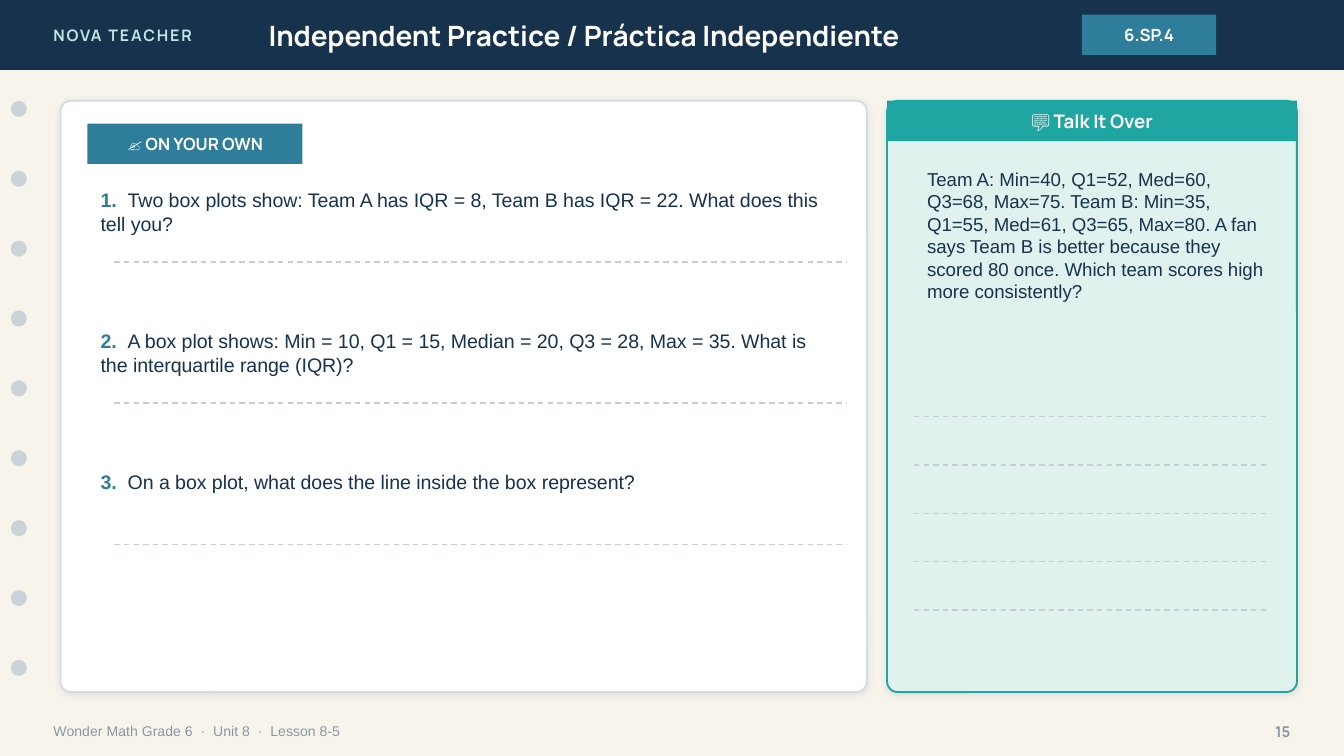
from lxml import etree
from pptx import Presentation
from pptx.dml.color import RGBColor
from pptx.enum.dml import MSO_LINE_DASH_STYLE as DASH
from pptx.enum.shapes import MSO_CONNECTOR, MSO_SHAPE as SHAPE
from pptx.enum.text import MSO_ANCHOR as ANCHOR, PP_ALIGN as ALIGN
from pptx.oxml import parse_xml
from pptx.oxml.ns import nsdecls, qn
from pptx.util import Pt

NAVY = RGBColor(0x17, 0x32, 0x4D)
BLUE = RGBColor(0x2E, 0x7D, 0x9A)
TEAL = RGBColor(0x1F, 0xA6, 0xA2)
MINT = RGBColor(0xDF, 0xF2, 0xEE)
PALE_TEAL = RGBColor(0xBF, 0xE6, 0xE2)
CREAM = RGBColor(0xF7, 0xF4, 0xEC)
WHITE = RGBColor(0xFF, 0xFF, 0xFF)
DOT_GREY = RGBColor(0xCB, 0xD3, 0xD9)
BORDER_GREY = RGBColor(0xD6, 0xDB, 0xDF)
RULE_GREY = RGBColor(0xC7, 0xCD, 0xD2)
FOOTER_GREY = RGBColor(0x8A, 0x96, 0xA3)

HEADING, BODY = "Manrope", "Arial"
HEADER_H = 37.44
CARD_TOP, CARD_H = 54, 316.8

QUESTIONS = [
    "Two box plots show: Team A has IQR = 8, Team B has IQR = 22. "
    "What does this tell you?",
    "A box plot shows: Min = 10, Q1 = 15, Median = 20, Q3 = 28, Max = 35. "
    "What is the interquartile range (IQR)?",
    "On a box plot, what does the line inside the box represent?",
]
DISCUSSION = (
    "Team A: Min=40, Q1=52, Med=60, Q3=68, Max=75. "
    "Team B: Min=35, Q1=55, Med=61, Q3=65, Max=80. "
    "A fan says Team B is better because they scored 80 once. "
    "Which team scores high more consistently?"
)


def style_run(r, size, color, font=BODY, bold=False):
    r.font.name = font
    r.font.size = Pt(size)
    r.font.bold = bold
    r.font.color.rgb = color


def add_text(slide, x, y, w, h, runs, size, font=BODY, anchor=ANCHOR.TOP,
             align=ALIGN.LEFT):
    """Add a wrapped text box; runs are (text, colour, bold)."""
    tf = slide.shapes.add_textbox(Pt(x), Pt(y), Pt(w), Pt(h)).text_frame
    tf.word_wrap = True
    tf.vertical_anchor = anchor
    p = tf.paragraphs[0]
    p.alignment = align
    for text, color, bold in runs:
        r = p.add_run()
        r.text = text
        style_run(r, size, color, font, bold)
    return p


def add_box(slide, kind, x, y, w, h, fill):
    s = slide.shapes.add_shape(kind, Pt(x), Pt(y), Pt(w), Pt(h))
    s.shadow.inherit = False
    s.fill.solid()
    s.fill.fore_color.rgb = fill
    s.line.fill.background()
    return s


def add_label(slide, x, y, w, h, fill, text, size):
    """Add a filled bar with a centred bold heading."""
    s = add_box(slide, SHAPE.RECTANGLE, x, y, w, h, fill)
    tf = s.text_frame
    tf.text = text
    tf.vertical_anchor = ANCHOR.MIDDLE
    p = tf.paragraphs[0]
    p.alignment = ALIGN.CENTER
    style_run(p.runs[0], size, WHITE, HEADING, True)


def add_card(slide, x, w, fill, border, radius):
    """Add a rounded panel with a faint shadow below it."""
    s = add_box(slide, SHAPE.ROUNDED_RECTANGLE, x, CARD_TOP, w, CARD_H, fill)
    s.adjustments[0] = radius
    s.line.color.rgb = border
    s.line.width = Pt(1)
    effects = s._element.spPr.find(qn("a:effectLst"))
    effects.append(parse_xml(
        f'<a:outerShdw {nsdecls("a")} blurRad="{Pt(4)}" dist="{Pt(1)}" '
        'dir="5400000" algn="bl" rotWithShape="0"><a:srgbClr val="1C2E42">'
        '<a:alpha val="10000"/></a:srgbClr></a:outerShdw>'))


def add_answer_line(slide, x1, x2, y):
    s = slide.shapes.add_connector(MSO_CONNECTOR.STRAIGHT,
                                   Pt(x1), Pt(y), Pt(x2), Pt(y))
    s.line.color.rgb = RULE_GREY
    s.line.width = Pt(0.75)
    s.line.dash_style = DASH.DASH
    etree.SubElement(s._element.spPr, qn("a:effectLst"))


def add_header(slide):
    add_box(slide, SHAPE.RECTANGLE, 0, 0, 720, HEADER_H, NAVY)
    p = add_text(slide, 21.6, 0, 172.8, HEADER_H,
                 [("NOVA TEACHER", PALE_TEAL, True)], 8.5, HEADING,
                 ANCHOR.MIDDLE)
    p.runs[0].font._element.set("spc", "100")
    add_text(slide, 136.8, 0, 403.2, HEADER_H,
             [("Independent Practice / Práctica Independiente", WHITE, True)],
             15, HEADING, ANCHOR.MIDDLE)
    add_label(slide, 579.6, 7.92, 72, 21.6, BLUE, "6.SP.4", 9)


def add_binder_holes(slide):
    for i in range(9):
        add_box(slide, SHAPE.OVAL, 5.76, 54 + 37.44 * i, 8.64, 8.64, DOT_GREY)


def add_footer(slide):
    add_text(slide, 21.6, 381.6, 504, 20.16,
             [("Wonder Math Grade 6  ·  Unit 8  ·  Lesson 8-5",
               FOOTER_GREY, False)], 7.5, anchor=ANCHOR.MIDDLE)
    add_text(slide, 662.4, 381.6, 36, 20.16, [("15", FOOTER_GREY, True)],
             8, HEADING, ANCHOR.MIDDLE, ALIGN.RIGHT)


def add_practice(slide):
    add_card(slide, 32.4, 432, WHITE, BORDER_GREY, 0.018)
    add_label(slide, 46.8, 66.24, 115.2, 21.6, BLUE, "✍️ ON YOUR OWN", 9)
    for i, question in enumerate(QUESTIONS):
        top = 97.2 + 75.6 * i
        add_text(slide, 46.8, top, 406.8, 36,
                 [(f"{i + 1}.  ", BLUE, True), (question, NAVY, False)], 10.5)
        add_answer_line(slide, 61.2, 453.6, top + 43.2)


def add_discussion(slide):
    add_card(slide, 475.2, 219.6, MINT, TEAL, 0.026)
    add_label(slide, 475.2, CARD_TOP, 219.6, 21.6, TEAL, "💬 Talk It Over", 10)
    add_text(slide, 489.6, 86.4, 194.4, 122.4, [(DISCUSSION, NAVY, False)], 10)
    for i in range(5):
        add_answer_line(slide, 489.6, 680.4, 223.2 + 25.92 * i)


def main():
    prs = Presentation()
    prs.slide_width, prs.slide_height = Pt(720), Pt(405)
    slide = prs.slides.add_slide(prs.slide_layouts[6])
    slide.background.fill.solid()
    slide.background.fill.fore_color.rgb = CREAM

    # Page frame
    add_header(slide)
    add_binder_holes(slide)
    add_footer(slide)

    # Left and right panels
    add_practice(slide)
    add_discussion(slide)

    prs.save("out.pptx")


if __name__ == "__main__":
    main()
